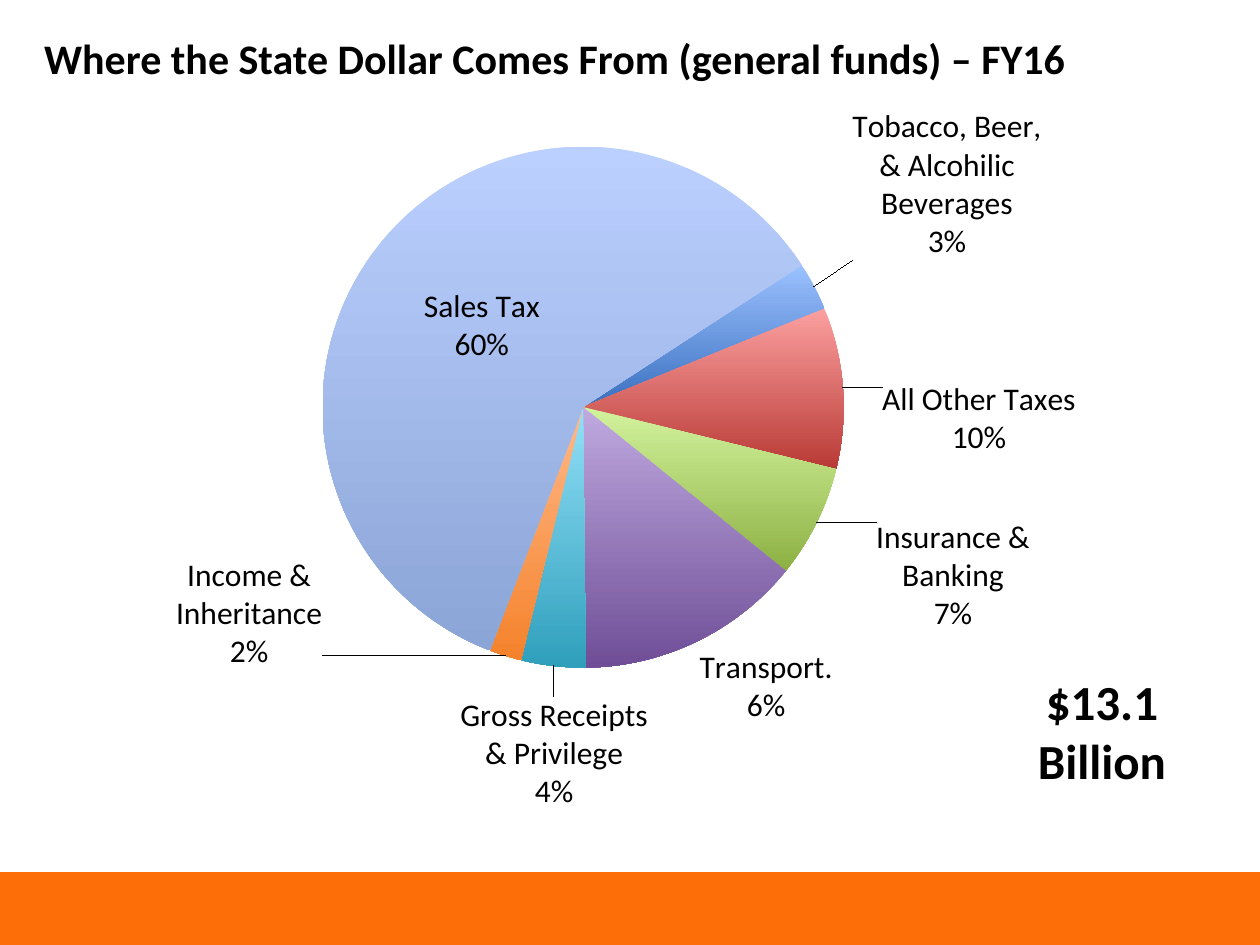
from typing import NamedTuple, Optional

from pptx import Presentation
from pptx.chart.data import CategoryChartData
from pptx.dml.color import RGBColor
from pptx.enum.chart import XL_CHART_TYPE as ChartType, XL_LABEL_POSITION as LabelPos
from pptx.enum.shapes import MSO_SHAPE as Shape
from pptx.enum.text import PP_ALIGN as Align
from pptx.oxml import parse_xml
from pptx.oxml.ns import nsdecls, qn
from pptx.util import Cm, Pt

BLACK = RGBColor(0x00, 0x00, 0x00)
ORANGE = RGBColor(0xFD, 0x6D, 0x08)
FONT = "Calibri"


class Slice(NamedTuple):
    name: str
    share: int
    top: RGBColor
    bottom: RGBColor
    shift: Optional[tuple[float, float]] = None
    stated_share: str = ""
    position: LabelPos = LabelPos.OUTSIDE_END


class Caption(NamedTuple):
    text: str
    left: float
    top: float
    width: float
    height: float
    size: int
    align: Align


SLICES = [
    Slice("Tobacco, Beer, & Alcohilic Beverages", 3,
          RGBColor(0x9B, 0xC1, 0xFF), RGBColor(0x3A, 0x70, 0xBF), (0.03, -0.03)),
    Slice("All Other Taxes", 10,
          RGBColor(0xFB, 0xA0, 0x9F), RGBColor(0xB9, 0x3A, 0x36), (0.03, 0.04)),
    Slice("Insurance & Banking", 7,
          RGBColor(0xD2, 0xF3, 0x9D), RGBColor(0x8D, 0xB0, 0x43), (0.05, -0.01)),
    Slice("Transport.", 14,
          RGBColor(0xBF, 0xA9, 0xDF), RGBColor(0x6F, 0x4E, 0x97), stated_share="6%"),
    Slice("Gross Receipts & Privilege", 4,
          RGBColor(0x93, 0xE0, 0xF8), RGBColor(0x2F, 0x9F, 0xBC), (0.09, 0.03)),
    Slice("Income & Inheritance", 2,
          RGBColor(0xFF, 0xB9, 0x8A), RGBColor(0xF5, 0x82, 0x2B), (-0.17, -0.14)),
    Slice("Sales Tax", 60,
          RGBColor(0xBB, 0xD0, 0xFF), RGBColor(0x8A, 0xA5, 0xD6), position=LabelPos.CENTER),
]

CAPTIONS = [
    Caption("Where the State Dollar Comes From (general funds) – FY16",
            0.64, 0.53, 23.16, 1.27, 24, Align.LEFT),
    Caption("$13.1 Billion", 20.6, 13.41, 3.23, 2.64, 28, Align.CENTER),
]


def style_font(font, size: int, bold: bool = False) -> None:
    font.name, font.size, font.bold = FONT, Pt(size), bold
    font.color.rgb = BLACK


def manual_layout(**settings):
    inner = "".join(f'<c:{tag} val="{value}"/>' for tag, value in settings.items())
    return parse_xml(f'<c:layout {nsdecls("c")}><c:manualLayout>{inner}'
                     "</c:manualLayout></c:layout>")


def add_caption(slide, caption: Caption) -> None:
    frame = slide.shapes.add_textbox(Cm(caption.left), Cm(caption.top),
                                     Cm(caption.width), Cm(caption.height)).text_frame
    frame.word_wrap = True
    frame.text = caption.text
    paragraph = frame.paragraphs[0]
    paragraph.alignment = caption.align
    style_font(paragraph.runs[0].font, caption.size, True)


def style_slice(series, index: int, item: Slice) -> None:
    point = series.points[index]
    fill = point.format.fill
    fill.gradient()
    fill.gradient_angle = 270
    for stop, color in zip(fill.gradient_stops, (item.top, item.bottom)):
        stop.color.rgb = color
    point.format.line.fill.background()

    label = point.data_label
    if item.stated_share:
        label.text_frame.text = f"{item.name}\n{item.stated_share}"
        for paragraph in label.text_frame.paragraphs:
            style_font(paragraph.runs[0].font, 18)
    else:
        style_font(label.font, 18)
    label.position = item.position

    element = series._element.xpath(f"c:dLbls/c:dLbl[c:idx/@val='{index}']")[0]
    for tag, shown in (("showVal", 0), ("showCatName", 1), ("showPercent", 1)):
        element.find(qn(f"c:{tag}")).set("val", str(shown))
    element.append(parse_xml(f'<c:separator {nsdecls("c")}>\n</c:separator>'))
    if item.shift:
        x, y = item.shift
        element.find(qn("c:idx")).addnext(manual_layout(x=x, y=y))


def add_revenue_pie(slide) -> None:
    data = CategoryChartData()
    data.categories = [item.name for item in SLICES]
    data.add_series("Series 1", [item.share for item in SLICES])
    chart = slide.shapes.add_chart(ChartType.PIE, Cm(2), Cm(2.13),
                                   Cm(21.44), Cm(15.39), data).chart
    chart.has_title = chart.has_legend = False
    style_font(chart.font, 18)
    plot = chart.plots[0]
    plot.vary_by_categories = True
    series = plot.series[0]
    labels = series.data_labels
    labels.show_value = False
    labels.show_category_name = labels.show_percentage = True
    style_font(labels.font, 18)
    for index, item in enumerate(SLICES):
        style_slice(series, index, item)

    pie = plot._element
    for angle in pie.findall(qn("c:firstSliceAng")):
        pie.remove(angle)
    pie.append(parse_xml(f'<c:firstSliceAng {nsdecls("c")} val="57"/>'))
    area = pie.getparent()
    for layout in area.findall(qn("c:layout")):
        area.remove(layout)
    area.insert(0, manual_layout(layoutTarget="inner", xMode="edge", yMode="edge",
                                 x=0.21, y=0.05, w=0.49, h=0.69))


def main() -> None:
    """Build the slide on state general fund revenue."""
    deck = Presentation()
    deck.slide_width, deck.slide_height = Cm(25.4), Cm(19.05)
    slide = deck.slides.add_slide(deck.slide_layouts[6])
    footer = slide.shapes.add_shape(Shape.RECTANGLE, 0, Cm(17.58), Cm(25.4), Cm(1.47))
    footer.shadow.inherit = False
    footer.fill.solid()
    footer.fill.fore_color.rgb = ORANGE
    footer.line.fill.background()
    add_revenue_pie(slide)
    for caption in CAPTIONS:
        add_caption(slide, caption)
    deck.save("out.pptx")


if __name__ == "__main__":
    main()
